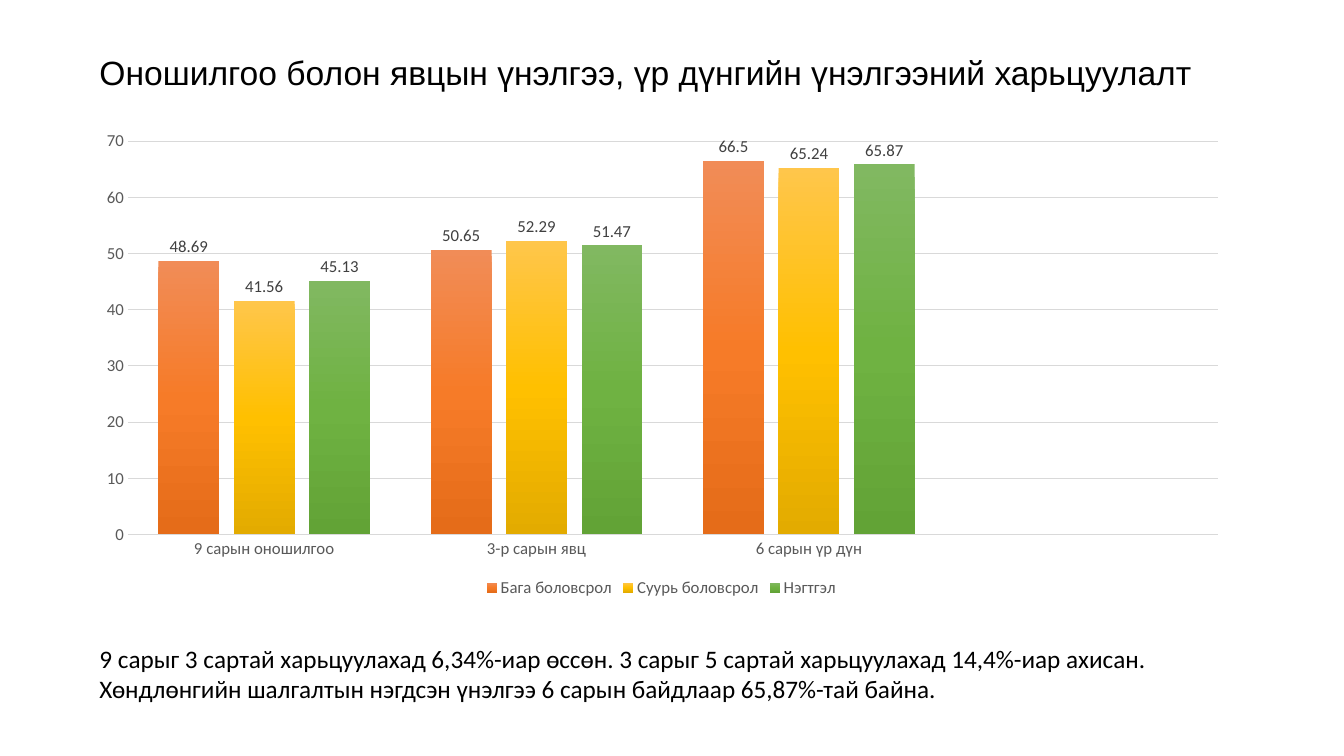
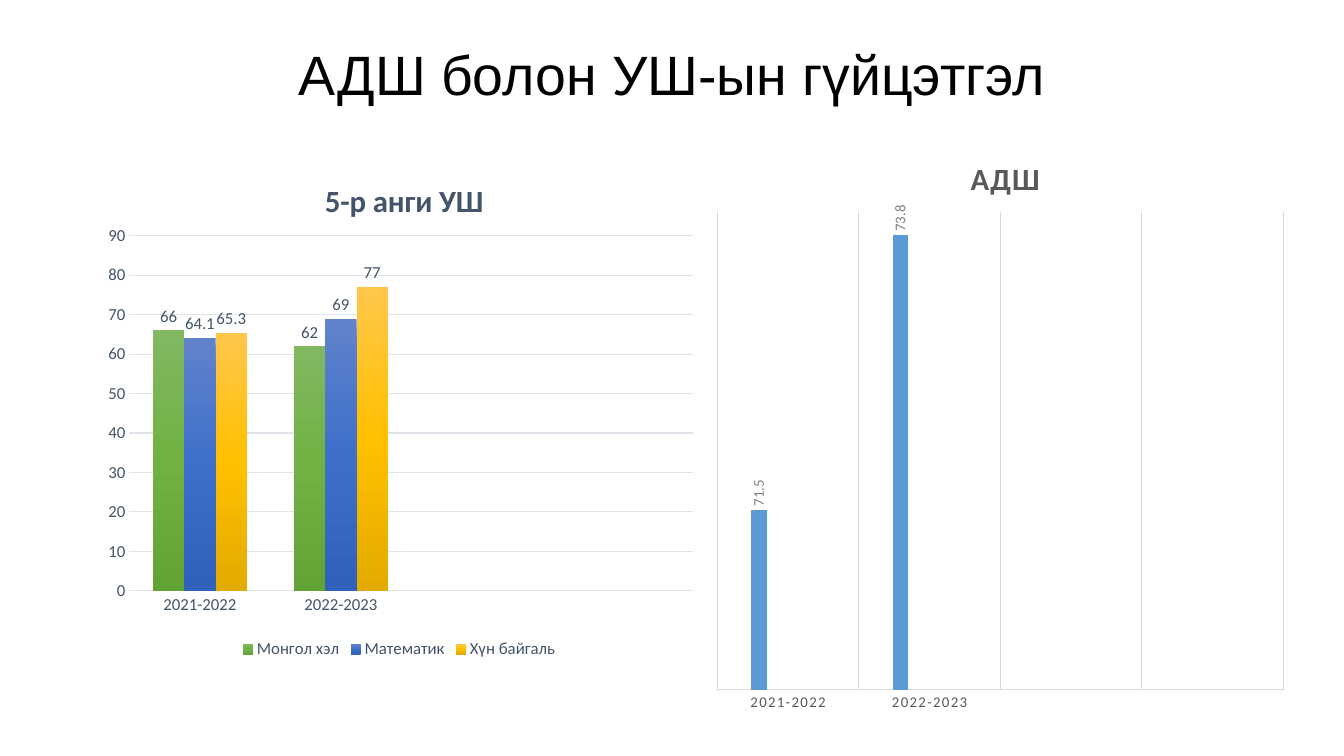
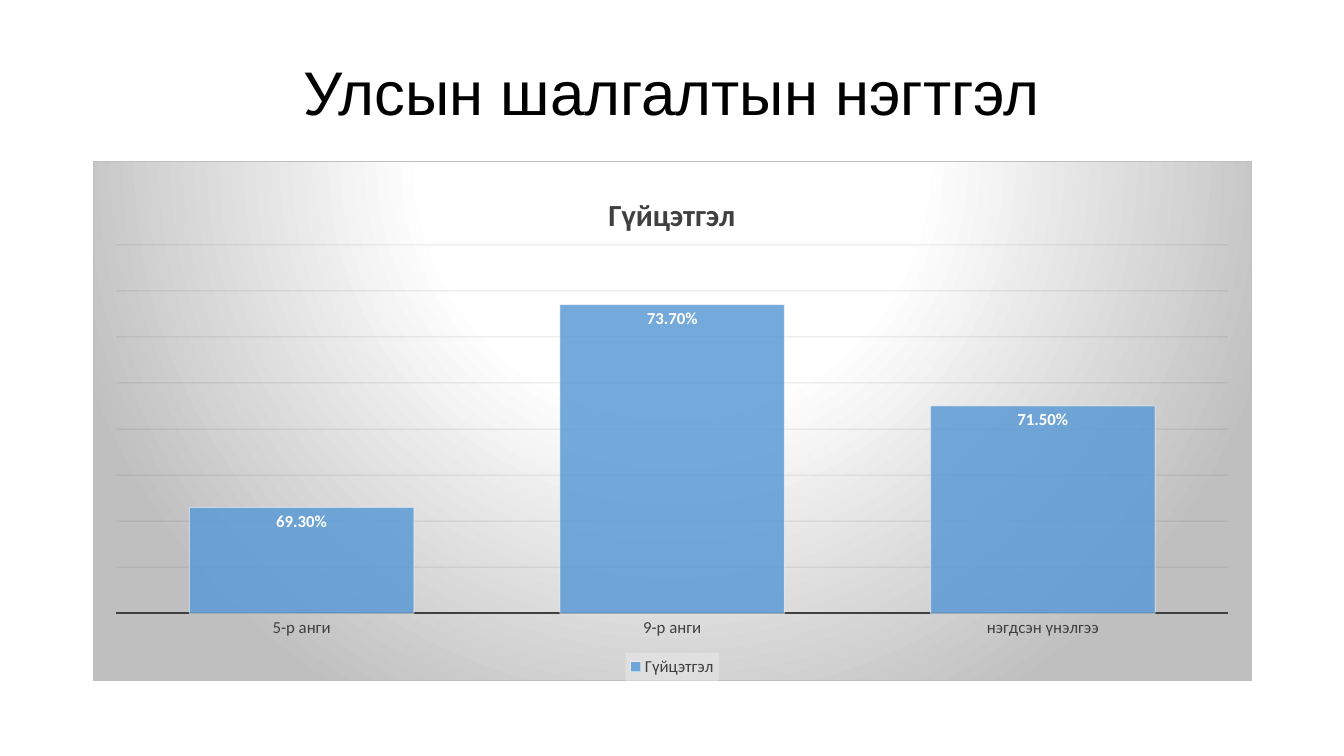
from lxml import etree
from pptx import Presentation
from pptx.chart.data import CategoryChartData
from pptx.dml.color import RGBColor
from pptx.enum.chart import XL_CHART_TYPE, XL_LABEL_POSITION, XL_LEGEND_POSITION, XL_TICK_MARK
from pptx.enum.text import MSO_ANCHOR, PP_ALIGN
from pptx.oxml.ns import qn
from pptx.util import Pt

COLUMN = XL_CHART_TYPE.COLUMN_CLUSTERED
OUTSIDE = XL_LABEL_POSITION.OUTSIDE_END
INSIDE = XL_LABEL_POSITION.INSIDE_END
BOTTOM = XL_LEGEND_POSITION.BOTTOM
NO_TICK = XL_TICK_MARK.NONE
MIDDLE = MSO_ANCHOR.MIDDLE
LEFT = PP_ALIGN.LEFT
CENTER = PP_ALIGN.CENTER

BLACK, WHITE = "000000", "FFFFFF"
GREY, DARK, SLATE, LABEL_GREY = "595959", "404040", "44546A", "808080"
GRID, PALE_GRID, SILVER = "D9D9D9", "E0E5EB", "BFBFBF"
BLUE = "5B9BD5"
ORANGE_FADE = ((0, "F18C57"), (50, "F67B28"), (100, "E56C19"))
GOLD_FADE = ((0, "FFC64B"), (50, "FFC000"), (100, "E3AB00"))
GREEN_FADE = ((0, "81B861"), (50, "6FB242"), (100, "62A336"))
BLUE_FADE = ((0, "6183CB"), (50, "3E70CA"), (100, "3062BB"))
SPOTLIGHT = ((0, WHITE), (39, WHITE), (100, SILVER))


def rgb(value):
    return RGBColor.from_string(value)


def add(parent, tag, **attrs):
    return etree.SubElement(parent, qn(tag), {k: str(v) for k, v in attrs.items()})


def set_font(font, color, spacing=0, **values):
    for name, value in values.items():
        setattr(font, name, value)
    font.color.rgb = rgb(color)
    if spacing:
        font._rPr.set("spc", str(spacing))


def set_line(line, color, width=0.75):
    line.color.rgb = rgb(color)
    line.width = Pt(width)


def set_alpha(element, percent):
    for clr in element.iter(qn("a:srgbClr")):
        add(clr, "a:alpha", val=percent * 1000)


def add_stops(grad, stops):
    stop_list = add(grad, "a:gsLst")
    for pos, color in stops:
        add(add(stop_list, "a:gs", pos=pos * 1000), "a:srgbClr", val=color)


def fade_down(series, stops):
    """Fill the bars with a vertical gradient."""
    series.format.fill.gradient()
    grad = series._element.find(qn("c:spPr")).find(qn("a:gradFill"))
    for child in list(grad):
        grad.remove(child)
    add_stops(grad, stops)
    add(grad, "a:lin", ang=5400000, scaled=0)


def add_backdrop(holder):
    """Give a legend or chart space its shape properties, in schema order."""
    sp_pr = etree.Element(qn("c:spPr"))
    holder.find(qn("c:txPr")).addprevious(sp_pr)
    return sp_pr


def place(holder, index, **fractions):
    """Set a manual layout in fractions of the chart."""
    for old in holder.findall(qn("c:layout")):
        holder.remove(old)
    layout = etree.Element(qn("c:layout"))
    holder.insert(index, layout)
    manual = add(layout, "c:manualLayout")
    if "w" in fractions:
        add(manual, "c:layoutTarget", val="inner")
    for mode in ("xMode", "yMode"):
        add(manual, "c:" + mode, val="edge")
    for name, value in fractions.items():
        add(manual, "c:" + name, val=value)


class Deck:
    """Shared style and the current slide."""
    heading_font = "Arial"
    body_font = "Calibri"

    def __init__(self):
        self.prs = Presentation()
        self.prs.slide_width, self.prs.slide_height = Pt(960), Pt(540)
        self.s = None

    def new_slide(self):
        self.s = self.prs.slides.add_slide(self.prs.slide_layouts[6])

    def text(self, box, lines, size, font=body_font, align=LEFT, anchor=None, spacing=None):
        tf = self.s.shapes.add_textbox(*map(Pt, box)).text_frame
        tf.word_wrap = True
        tf.vertical_anchor = anchor
        for i, line in enumerate(lines):
            p = tf.add_paragraph() if i else tf.paragraphs[0]
            p.alignment, p.line_spacing = align, spacing
            r = p.add_run()
            r.text = line
            set_font(r.font, BLACK, name=font, size=Pt(size))

    def title(self, box, line, size, align=CENTER):
        self.text(box, [line], size, self.heading_font, align, MIDDLE, 0.9)

    def chart(self, box, cats, series, scale, plot_area, gap, overlap=0):
        """Add a column chart; scale is minimum, maximum and step."""
        data = CategoryChartData()
        data.categories = cats
        for name, values, _ in series:
            data.add_series(name, values)
        chart = self.s.shapes.add_chart(COLUMN, *map(Pt, box), data).chart
        chart.has_title = chart.has_legend = False
        set_font(chart.font, BLACK, name=self.body_font, size=Pt(10))
        place(chart._chartSpace.chart.plotArea, 0, **dict(zip("xywh", plot_area)))
        plot = chart.plots[0]
        plot.gap_width, plot.overlap, plot.vary_by_categories = gap, overlap, False
        for ser, (_, _, fill) in zip(plot.series, series):
            ser.invert_if_negative = False
            if isinstance(fill, str):
                ser.format.fill.solid()
                ser.format.fill.fore_color.rgb = rgb(fill)
            else:
                fade_down(ser, fill)
        axis = chart.value_axis
        axis.minimum_scale, axis.maximum_scale, axis.major_unit = scale
        return chart

    def category_axis(self, chart, color, line, width=0.75, size=12, spacing=0):
        axis = chart.category_axis
        axis.major_tick_mark = NO_TICK
        set_line(axis.format.line, line, width)
        set_font(axis.tick_labels.font, color, spacing, name=self.body_font, size=Pt(size))

    def value_axis(self, chart, color, grid):
        axis = chart.value_axis
        axis.major_tick_mark = NO_TICK
        axis.format.line.fill.background()
        set_line(axis.major_gridlines.format.line, grid)
        set_font(axis.tick_labels.font, color, name=self.body_font, size=Pt(12))

    def legend(self, chart, color):
        chart.has_legend = True
        chart.legend.position = BOTTOM
        chart.legend.include_in_layout = False
        set_font(chart.legend.font, color, name=self.body_font, size=Pt(12))

    def labels(self, chart, color, size=12, position=OUTSIDE, fmt="General", bold=False, turned=False):
        for ser in chart.plots[0].series:
            labels = ser.data_labels
            labels.show_value, labels.position = True, position
            labels.number_format, labels.number_format_is_linked = fmt, False
            set_font(labels.font, color, name=self.body_font, size=Pt(size), bold=bold)
            if turned:
                body = labels._element.find(qn("c:txPr")).find(qn("a:bodyPr"))
                body.set("rot", "-5400000")
                body.set("vert", "horz")

    def chart_title(self, chart, line, color, x, y, spacing=0):
        chart.has_title = True
        r = chart.chart_title.text_frame.paragraphs[0].add_run()
        r.text = line
        set_font(r.font, color, spacing, name=self.body_font, size=Pt(22), bold=True)
        chart.chart_title.include_in_layout = False
        place(chart.chart_title._element, 1, x=x, y=y)


def comparison_slide(deck):
    deck.new_slide()
    deck.title((64, 36.7, 842.4, 33.8),
               "Оношилгоо болон явцын үнэлгээ, үр дүнгийн үнэлгээний харьцуулалт", 24, LEFT)
    chart = deck.chart(
        (58.3, 87.1, 828, 342.7),
        ["9 сарын оношилгоо", "3-р сарын явц", "6 сарын үр дүн", ""],
        [("Бага боловсрол", (48.69, 50.65, 66.5, None), ORANGE_FADE),
         ("Суурь боловсрол", (41.56, 52.29, 65.24, None), GOLD_FADE),
         ("Нэгтгэл", (45.13, 51.47, 65.87, None), GREEN_FADE)],
        (0, 70, 10), (0.04, 0.04, 0.94, 0.82), gap=100, overlap=-24)
    deck.category_axis(chart, GREY, GRID, 1)
    deck.value_axis(chart, GREY, GRID)
    deck.legend(chart, GREY)
    deck.labels(chart, DARK)
    deck.text((64, 455.8, 774.7, 51), [
        "9 сарыг 3 сартай харьцуулахад 6,34%-иар өссөн. 3 сарыг 5 сартай харьцуулахад 14,4%-иар ахисан.",
        "Хөндлөнгийн шалгалтын нэгдсэн үнэлгээ 6 сарын байдлаар 65,87%-тай байна."], 18)


def performance_slide(deck):
    deck.new_slide()
    deck.title((66.2, 28.8, 828, 53.3), "АДШ болон УШ-ын гүйцэтгэл", 39.6)
    years = ["2021-2022", "2022-2023", "", ""]
    blanks = (None, None)

    subjects = deck.chart(
        (66.2, 105.8, 437.8, 367.9), years,
        [("Монгол хэл", (66, 62) + blanks, GREEN_FADE),
         ("Математик", (64.1, 69) + blanks, BLUE_FADE),
         ("Хүн байгаль", (65.3, 77) + blanks, GOLD_FADE)],
        (0, 90, 10), (0.06, 0.17, 0.92, 0.69), gap=150)
    deck.category_axis(subjects, SLATE, PALE_GRID)
    deck.value_axis(subjects, SLATE, PALE_GRID)
    deck.legend(subjects, SLATE)
    deck.labels(subjects, SLATE)
    deck.chart_title(subjects, "5-р анги УШ", SLATE, 0.37, 0.05)

    overall = deck.chart(
        (504, 91.4, 421.2, 427), years,
        [("Series 1", (71.5, 73.8) + blanks, BLUE),
         ("Series 2", blanks * 2, "ED7D31"),
         ("Series 3", blanks * 2, "A5A5A5")],
        (70, 74, 0.5), (0.02, 0.14, 0.96, 0.8), gap=444, overlap=-90)
    deck.category_axis(overall, GREY, GRID, size=10.6, spacing=100)
    overall.category_axis.has_major_gridlines = True
    set_line(overall.category_axis.major_gridlines.format.line, GRID)
    overall.value_axis.has_major_gridlines = False
    overall.value_axis.visible = False
    deck.labels(overall, LABEL_GREY, 10.6, turned=True)
    deck.chart_title(overall, "АДШ", GREY, 0.44, 0.04, spacing=100)


def summary_slide(deck):
    deck.new_slide()
    deck.title((66.2, 28.8, 828, 78.5), "Улсын шалгалтын нэгтгэл", 44)
    chart = deck.chart(
        (66.2, 115.2, 828, 371.5),
        ["5-р анги", "9-р анги", "нэгдсэн үнэлгээ"],
        [("Гүйцэтгэл", (0.693, 0.737, 0.715), BLUE)],
        (0.67, 0.75, 0.01), (0.02, 0.16, 0.96, 0.71), gap=65)
    deck.category_axis(chart, DARK, DARK, 1.5)
    grid = chart.value_axis.major_gridlines
    set_line(grid.format.line, "0D0D0D")
    set_alpha(chart.value_axis._element.find(qn("c:majorGridlines")), 10)
    chart.value_axis.visible = False
    deck.legend(chart, DARK)
    deck.labels(chart, WHITE, position=INSIDE, fmt="0.00%", bold=True)
    deck.chart_title(chart, "Гүйцэтгэл", DARK, 0.44, 0.05)

    ser = chart.plots[0].series[0]
    bar = ser._element.find(qn("c:spPr"))
    set_alpha(bar, 85)
    set_line(ser.format.line, WHITE)
    set_alpha(bar.find(qn("a:ln")), 50)

    panel = add_backdrop(chart._chartSpace)
    grad = add(panel, "a:gradFill")
    add_stops(grad, SPOTLIGHT)
    circle = add(grad, "a:path", path="circle")
    add(circle, "a:fillToRect", l=50000, t=-80000, r=50000, b=180000)
    border = add(panel, "a:ln", w=Pt(0.75))
    add(add(border, "a:solidFill"), "a:srgbClr", val=SILVER)

    key = add_backdrop(chart.legend._element)
    add(add(key, "a:solidFill"), "a:srgbClr", val="F2F2F2")
    set_alpha(key, 39)


def main():
    deck = Deck()
    comparison_slide(deck)
    performance_slide(deck)
    summary_slide(deck)
    deck.prs.save("out.pptx")


if __name__ == "__main__":
    main()
